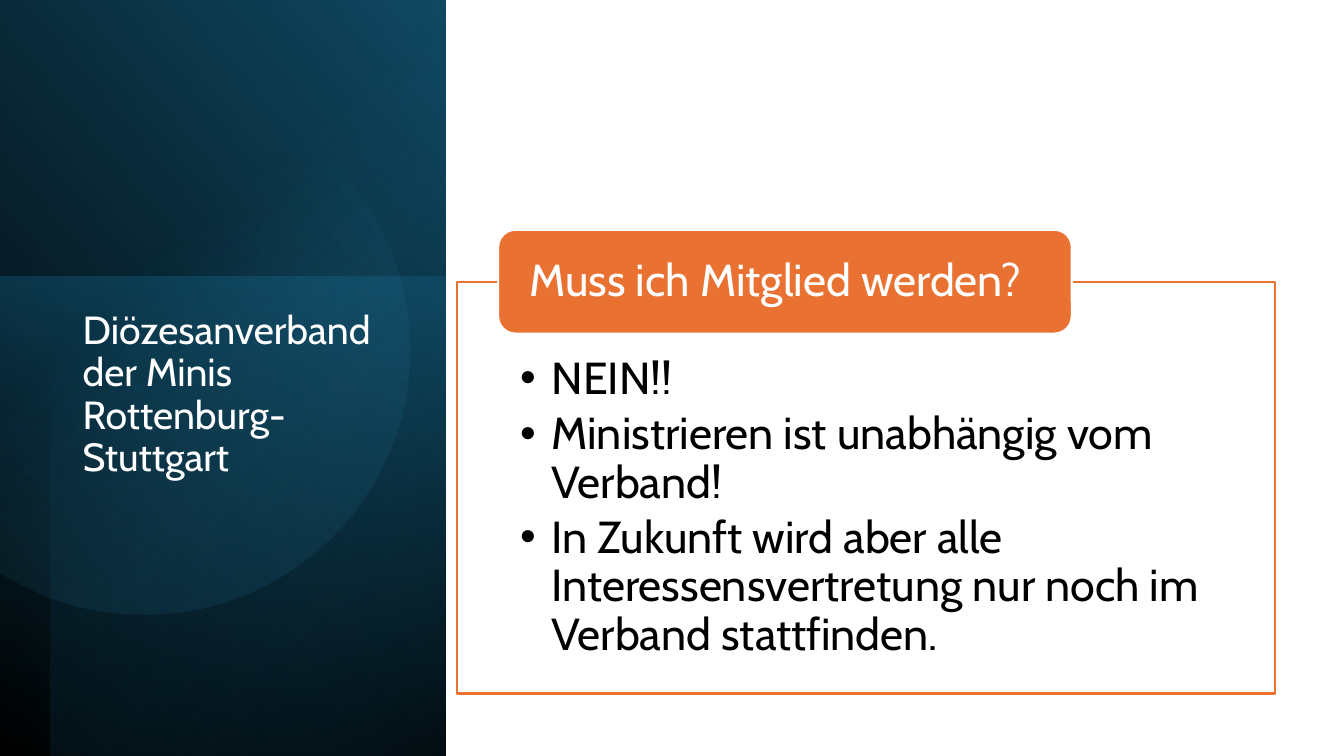
import dataclasses
import math
import typing

import lxml.etree
import pptx
import pptx.dml.color
import pptx.enum.shapes
import pptx.enum.text
import pptx.oxml.ns
import pptx.util

Inches = pptx.util.Inches
Pt = pptx.util.Pt
qn = pptx.oxml.ns.qn
RGB = pptx.dml.color.RGBColor.from_string
KIND = pptx.enum.shapes.MSO_SHAPE
ANCHOR = pptx.enum.text.MSO_ANCHOR


@dataclasses.dataclass(frozen=True)
class Theme:
    font: str = "Cabin"
    title: int = 28
    text: int = 32
    line: float = 1.5
    black: str = "000000"
    white: str = "FFFFFF"
    orange: str = "E97132"
    teal: str = "156082"
    deep: str = "0B3041"
    blue: str = "104862"
    sky: str = "46B1E1"


THEME = Theme()


class Box(typing.NamedTuple):
    left: float
    top: float
    width: float
    height: float

    def lengths(self) -> list:
        return [Inches(side) for side in self]


class Stop(typing.NamedTuple):
    place: float
    color: str
    alpha: int = 100


@dataclasses.dataclass(frozen=True)
class Panel:
    box: Box
    turn: int
    flip: bool
    angle: int
    stops: tuple


PANELS = (
    Panel(Box(-1.55, 1.55, 7.52, 4.42), 90, True, 310,
          (Stop(0, THEME.black), Stop(1, THEME.blue))),
    Panel(Box(-0.17, 2.91, 4.76, 4.42), 270, False, 190,
          (Stop(0, THEME.teal, 50), Stop(1, THEME.deep, 0))),
    Panel(Box(-1.29, 1.79, 7.5, 3.92), 270, True, 220,
          (Stop(0, THEME.black, 59), Stop(0.69, THEME.teal, 0))),
)
FRAME = Box(4.53, 2.8, 8.12, 4.08)
ITEMS = (
    "NEIN!!",
    "Ministrieren ist unabhängig vom Verband!",
    "In Zukunft wird aber alle Interessensvertretung nur noch im Verband stattfinden.",
)


def fade(shape, alphas: typing.Iterable[int]) -> None:
    """Set the opacity, in percent, of the fill colours in turn."""
    colors = list(shape.element.spPr.iter(qn("a:srgbClr")))
    for color, alpha in zip(colors, alphas):
        if alpha < 100:
            lxml.etree.SubElement(color, qn("a:alpha"), val=str(alpha * 1000))


def blend(shape, stops: tuple, angle: int) -> None:
    """Fill with a two-stop gradient at a clockwise angle, without outline."""
    shape.shadow.inherit = False
    shape.line.fill.background()
    shape.fill.gradient()
    shape.fill.gradient_angle = 360 - angle
    for mark, stop in zip(shape.fill.gradient_stops, stops):
        mark.position = stop.place
        mark.color.rgb = RGB(stop.color)
    fade(shape, [stop.alpha for stop in stops])


def draw_panel(slide, panel: Panel) -> None:
    shape = slide.shapes.add_shape(KIND.RECTANGLE, *panel.box.lengths())
    shape.rotation = panel.turn
    if panel.flip:
        shape.element.spPr.xfrm.set("flipH", "1")
    blend(shape, panel.stops, panel.angle)


def draw_disc(slide) -> None:
    """Draw the disc that the left slide edge cuts off."""
    mid_x, mid_y, radius, half = 1.43, 3.47, 2.63, 123
    turns = [math.radians(turn) for turn in range(-half, half + 1, 3)]
    points = [(Inches(max(0, mid_x + radius * math.cos(turn))),
               Inches(mid_y + radius * math.sin(turn))) for turn in turns]
    path = slide.shapes.build_freeform(*points[0])
    path.add_line_segments(points[1:], close=True)
    blend(path.convert_to_shape(),
          (Stop(0.39, THEME.sky, 0), Stop(1, THEME.blue, 26)), 52)


def draw_block(slide, kind, box: Box, fill: str, line: str):
    shape = slide.shapes.add_shape(kind, *box.lengths())
    shape.shadow.inherit = False
    shape.fill.solid()
    shape.fill.fore_color.rgb = RGB(fill)
    shape.line.color.rgb = RGB(line)
    shape.line.width = Pt(THEME.line)
    return shape


def place(slide, holder, box: Box):
    """Move a placeholder into its box and in front of all else."""
    holder.left, holder.top, holder.width, holder.height = box.lengths()
    slide.shapes.element.append(holder.element)
    return holder


def write(shape, *lines: str, size: int, color: str, inset: tuple = (0.1, 0.05, 0.1, 0.05),
          anchor=ANCHOR.TOP, after: float = 0, bullet: float = 0) -> None:
    """Set the lines as paragraphs; bullet is the hanging indent in inches."""
    frame = shape.text_frame
    frame.word_wrap = True
    frame.auto_size = pptx.enum.text.MSO_AUTO_SIZE.NONE
    frame.vertical_anchor = anchor
    (frame.margin_left, frame.margin_top,
     frame.margin_right, frame.margin_bottom) = map(Inches, inset)
    frame.text = "\n".join(lines)
    for para in frame.paragraphs:
        para.alignment = pptx.enum.text.PP_ALIGN.LEFT
        para.line_spacing = 0.9
        para.space_before = Pt(0)
        para.space_after = Pt(after)
        para.font.name = THEME.font
        para.font.size = Pt(size)
        para.font.color.rgb = RGB(color)
        for run in para.runs:
            run.font.name = THEME.font
            run.font.size = Pt(size)
            run.font.color.rgb = RGB(color)
        if bullet:
            props = para._p.get_or_add_pPr()
            props.set("marL", str(Inches(bullet)))
            props.set("indent", str(-Inches(bullet)))
            lxml.etree.SubElement(props, qn("a:buFont"), typeface="Arial")
            lxml.etree.SubElement(props, qn("a:buChar"), char="•")
            props.append(props.find(qn("a:defRPr")))


def main() -> None:
    deck = pptx.Presentation()
    deck.slide_width, deck.slide_height = Inches(13.33), Inches(7.5)
    slide = deck.slides.add_slide(deck.slide_layouts[1])
    for panel in PANELS:
        draw_panel(slide, panel)
    draw_disc(slide)

    title = place(slide, slide.shapes.title, Box(0.72, 3.03, 3.15, 3.36))
    write(title, "Diözesanverband der Minis Rottenburg-Stuttgart",
          size=THEME.title, color=THEME.white)

    frame = draw_block(slide, KIND.RECTANGLE, FRAME, THEME.white, THEME.orange)
    fade(frame, [90])
    body = place(slide, slide.placeholders[1], FRAME)
    write(body, *ITEMS, size=THEME.text, color=THEME.black,
          inset=(0.63, 0.73, 0.63, 0.25), after=4.8, bullet=0.31)

    label = draw_block(slide, KIND.ROUNDED_RECTANGLE, Box(4.94, 2.28, 5.69, 1.03),
                       THEME.orange, THEME.white)
    write(label, "Muss ich Mitglied werden?", size=THEME.text, color=THEME.white,
          inset=(0.26, 0, 0.26, 0), anchor=ANCHOR.MIDDLE)
    deck.save("out.pptx")


if __name__ == "__main__":
    main()
